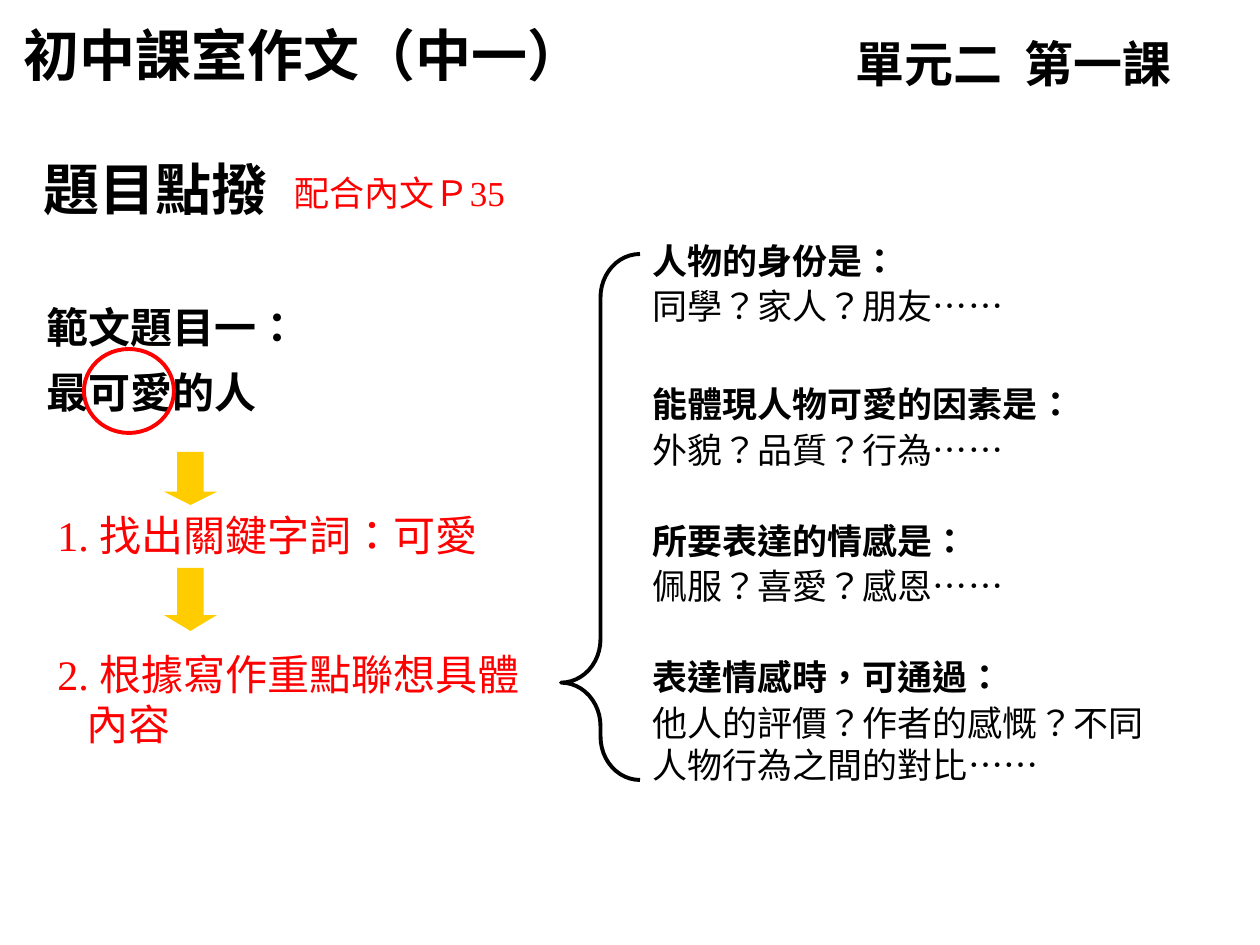
"""Build a slide on picking out the key points of an essay title."""
from dataclasses import dataclass

import pptx
import pptx.dml.color
import pptx.enum.lang
import pptx.enum.shapes
import pptx.enum.text
import pptx.util

BLACK, RED, GOLD = "000000", "FF0000", "FFCC00"
SANS, SERIF, HAN = "DejaVu Sans", "Times New Roman", "Noto Sans CJK SC"
KIND = pptx.enum.shapes.MSO_SHAPE


@dataclass
class Box:
    left: int
    top: int
    width: int
    height: int


@dataclass
class Line:
    runs: list[tuple[str, str]]
    size: int
    color: str = BLACK
    bold: bool = False
    before: float = 0
    space: float = 1.0
    hang: int = 0


@dataclass
class Mark:
    kind: KIND
    box: Box
    fill: str = ""
    edge: str = ""
    bends: tuple[float, ...] = ()


@dataclass
class Point:
    head: str
    body: str
    before: float


def px(count: int) -> int:
    """Turn px into EMU."""
    return pptx.util.Emu(round(count * 914400 / 126))


def paint(value: str) -> pptx.dml.color.RGBColor:
    """Turn a hex string into a colour."""
    return pptx.dml.color.RGBColor.from_string(value)


def write(shape, box: Box, lines: list[Line]) -> None:
    """Place a text shape and fill it with lines."""
    shape.left, shape.top = px(box.left), px(box.top)
    shape.width, shape.height = px(box.width), px(box.height)
    frame = shape.text_frame
    frame.word_wrap = True
    frame.auto_size = pptx.enum.text.MSO_AUTO_SIZE.NONE
    frame.vertical_anchor = pptx.enum.text.MSO_ANCHOR.TOP
    for spot, line in enumerate(lines):
        para = frame.add_paragraph() if spot else frame.paragraphs[0]
        para.alignment = pptx.enum.text.PP_ALIGN.LEFT
        para.line_spacing = line.space
        para.space_before = pptx.util.Pt(line.before)
        if line.hang:
            props = para._p.get_or_add_pPr()
            props.set("marL", str(px(line.hang)))
            props.set("indent", str(-px(line.hang)))
        font = para.font
        font.size, font.bold = pptx.util.Pt(line.size), line.bold
        font.color.rgb = paint(line.color)
        same = len({name for _, name in line.runs}) == 1
        if same:
            font.name = line.runs[0][1]
        for text, name in line.runs:
            run = para.add_run()
            run.text = text
            run.font.language_id = pptx.enum.lang.MSO_LANGUAGE_ID.CHINESE_HONG_KONG_SAR
            if not same:
                run.font.name = name


def draw(slide, mark: Mark) -> None:
    """Draw one preset shape."""
    box = mark.box
    shape = slide.shapes.add_shape(
        mark.kind, px(box.left), px(box.top), px(box.width), px(box.height))
    shape.shadow.inherit = False
    for spot, bend in enumerate(mark.bends):
        shape.adjustments[spot] = bend
    if mark.fill:
        shape.fill.solid()
        shape.fill.fore_color.rgb = paint(mark.fill)
    else:
        shape.fill.background()
    if mark.edge:
        shape.line.color.rgb = paint(mark.edge)
        shape.line.width = pptx.util.Pt(2.25)
    else:
        shape.line.fill.background()


def step(mark: str, text: str) -> Line:
    """Make a numbered step."""
    return Line([(mark + " ", SERIF), (text, SANS)], 24, RED, hang=29)


def pair(point: Point) -> list[Line]:
    """Make the bold head and plain body of a point."""
    return [
        Line([(point.head, SANS)], 20, bold=True, before=point.before),
        Line([(point.body, SANS), ("……", HAN)], 20, before=2),
    ]


POINTS = [
    Point("人物的身份是：", "同學？家人？朋友", 0),
    Point("能體現人物可愛的因素是：", "外貌？品質？行為", 32),
    Point("所要表達的情感是：", "佩服？喜愛？感恩", 28),
    Point("表達情感時，可通過：", "他人的評價？作者的感慨？不同人物行為之間的對比", 28),
]
TITLE = Line([("初中課室作文（中一）", "Karla")], 32, bold=True)
TEXTS = [
    (Box(34, 280, 630, 144), [
        Line([(text, SANS)], 24, bold=True, space=1.3)
        for text in ("範文題目一：", "最可愛的人")]),
    (Box(45, 503, 514, 63), [step("1.", "找出關鍵字詞：可愛")]),
    (Box(45, 642, 525, 113), [step("2.", "根據寫作重點聯想具體內容")]),
    (Box(640, 233, 525, 567), [line for point in POINTS for line in pair(point)]),
    (Box(31, 148, 388, 79), [Line([("題目點撥", "Arial")], 32, bold=True)]),
    (Box(843, 27, 422, 72), [Line([("單元二  第一課", "Karla")], 28, bold=True)]),
    (Box(282, 165, 311, 54), [Line([("配合內文Ｐ35", SERIF)], 20, RED)]),
]
MARKS = [
    Mark(KIND.OVAL, Box(84, 349, 90, 84), edge=RED),
    Mark(KIND.DOWN_ARROW, Box(164, 452, 53, 53), GOLD, bends=(0.5, 0.25)),
    Mark(KIND.DOWN_ARROW, Box(164, 568, 53, 63), GOLD, bends=(0.5, 0.3)),
    Mark(KIND.LEFT_BRACE, Box(561, 254, 79, 526), edge=BLACK, bends=(0.55, 0.815)),
]


def main() -> None:
    """Build and save the slide."""
    deck = pptx.Presentation()
    deck.slide_width, deck.slide_height = px(1260), px(945)
    slide = deck.slides.add_slide(deck.slide_layouts[5])
    write(slide.shapes.title, Box(11, 14, 658, 79), [TITLE])
    for box, lines in TEXTS:
        write(slide.shapes.add_textbox(0, 0, 0, 0), box, lines)
    for mark in MARKS:
        draw(slide, mark)
    deck.save("out.pptx")


if __name__ == "__main__":
    main()
